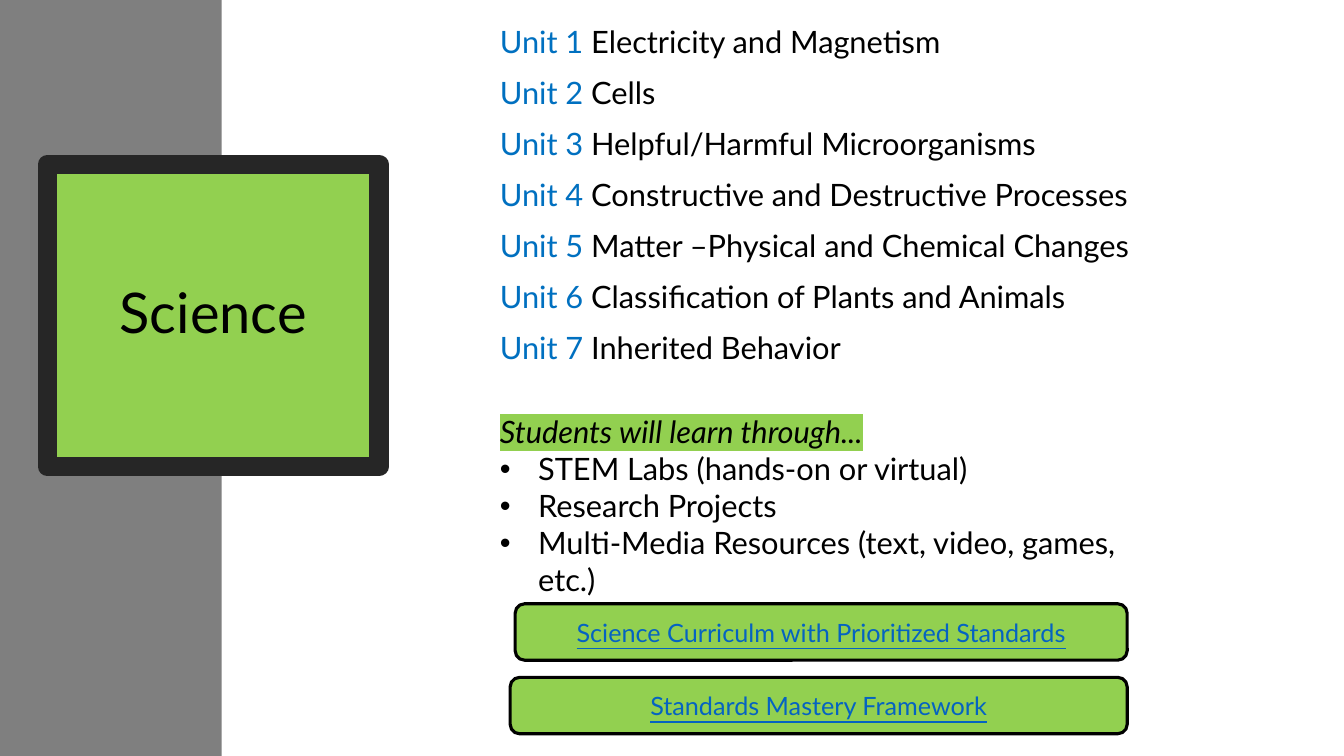
from lxml import etree
from pptx import Presentation
from pptx.dml.color import RGBColor
from pptx.enum.shapes import MSO_SHAPE
from pptx.enum.text import MSO_ANCHOR, MSO_AUTO_SIZE, PP_ALIGN
from pptx.oxml.ns import qn
from pptx.util import Inches, Pt

RECT, ROUNDED = MSO_SHAPE.RECTANGLE, MSO_SHAPE.ROUNDED_RECTANGLE
MIDDLE, CENTER, NO_FIT = MSO_ANCHOR.MIDDLE, PP_ALIGN.CENTER, MSO_AUTO_SIZE.NONE
COLORS = {"gray": "7F7F7F", "green": "92D050", "frame": "262626",
          "black": "000000", "blue": "0070C0", "link": "0563C1"}


def rgb(name):
    return RGBColor.from_string(COLORS[name])


def style(r, size, color):
    r.font.name = "Lato"
    r.font.size = Pt(size)
    r.font.color.rgb = rgb(color)


prs = Presentation()
prs.slide_width, prs.slide_height = Inches(13.33), Inches(7.5)
s = prs.slides.add_slide(prs.slide_layouts[5])

# Gray side band, behind the title
band = s.shapes.add_shape(RECT, 0, 0, Inches(2.2), Inches(7.5))
band.shadow.inherit = False
band.fill.solid()
band.fill.fore_color.rgb = rgb("gray")
band.line.fill.background()
title = s.shapes.title
title._element.addprevious(band._element)

# Title in a thick frame with rounded outer corners
title.left, title.top = Inches(0.47), Inches(1.63)
title.width, title.height = Inches(3.29), Inches(3)
title.fill.solid()
title.fill.fore_color.rgb = rgb("green")
title.line.color.rgb = rgb("frame")
title.line.width = Pt(13.75)
etree.SubElement(title.line._ln, qn("a:round"))
tf = title.text_frame
tf.text = "Science"
tf.auto_size = NO_FIT
tf.word_wrap = True
tf.vertical_anchor = MIDDLE
p = tf.paragraphs[0]
p.alignment = CENTER
p.line_spacing = 0.9
style(p.runs[0], 40, "black")

# Units
units = ["Electricity and Magnetism", "Cells", "Helpful/Harmful Microorganisms",
         "Constructive and Destructive Processes",
         "Matter –Physical and Chemical Changes",
         "Classification of Plants and Animals", "Inherited Behavior"]
tf = s.shapes.add_textbox(Inches(4.86), Inches(0.18), Inches(6.53), Inches(3.72)).text_frame
tf.word_wrap = True
for i, unit in enumerate(units):
    p = tf.add_paragraph() if i else tf.paragraphs[0]
    p.space_before = Pt(10)
    for text, color in ((f"Unit {i + 1}", "blue"), (f" {unit}", "black")):
        r = p.add_run()
        r.text = text
        style(r, 22, color)

# Link buttons
buttons = [("Science Curriculm with Prioritized Standards", 5.11, 5.99, 6.07),
           ("Standards Mastery Framework", 5.06, 6.72, 6.12)]
for text, left, top, width in buttons:
    button = s.shapes.add_shape(ROUNDED, Inches(left), Inches(top), Inches(width), Inches(0.56))
    button.shadow.inherit = False
    button.fill.solid()
    button.fill.fore_color.rgb = rgb("green")
    button.line.color.rgb = rgb("black")
    button.line.width = Pt(2.25)
    tf = button.text_frame
    tf.text = text
    tf.vertical_anchor = MIDDLE
    p = tf.paragraphs[0]
    p.alignment = CENTER
    style(p.runs[0], 18, "link")
    p.runs[0].font.underline = True

# Ways of learning: highlighted heading, then bullets
ways = ["Students will learn through...", "STEM Labs (hands-on or virtual)",
        "Research Projects", "Multi-Media Resources (text, video, games, etc.)"]
tf = s.shapes.add_textbox(Inches(4.86), Inches(4.05), Inches(6.76), Inches(1.58)).text_frame
tf.word_wrap = True
for i, way in enumerate(ways):
    p = tf.add_paragraph() if i else tf.paragraphs[0]
    p.text = way
    r = p.runs[0]
    style(r, 22, "black")
    if i:
        pPr = p._p.get_or_add_pPr()
        pPr.set("marL", str(Inches(0.38)))
        pPr.set("indent", str(-Inches(0.38)))
        etree.SubElement(pPr, qn("a:buFont"), typeface="Arial")
        etree.SubElement(pPr, qn("a:buChar"), char="•")
    else:
        r.font.italic = True
        highlight = etree.Element(qn("a:highlight"))
        etree.SubElement(highlight, qn("a:srgbClr"), val=COLORS["green"])
        r._r.rPr.find(qn("a:solidFill")).addnext(highlight)

prs.save("out.pptx")
